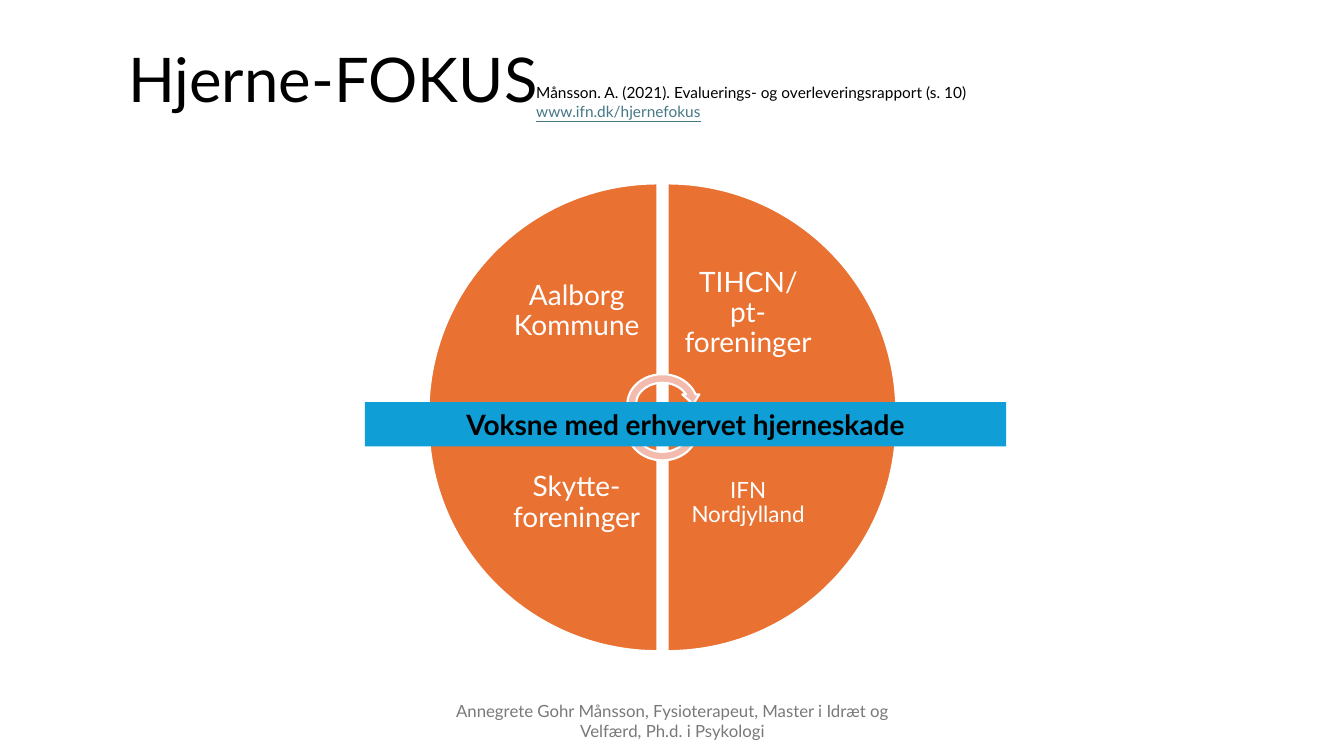
from pptx import Presentation
from pptx.dml.color import RGBColor
from pptx.enum.shapes import MSO_SHAPE
from pptx.enum.text import MSO_ANCHOR, PP_ALIGN
from pptx.util import Emu, Pt

PX = 9144  # 100 px to the inch
FONT = "Lato"
WHITE, BLACK, ORANGE = "FFFFFF", "000000", "E97132"

# label, column, row, rotation, text size, label lift
WEDGES = [
    ("Aalborg Kommune", 0, 0, 0, 20, 20),
    ("TIHCN/pt-foreninger", 1, 0, 90, 20, 18),
    ("IFN Nordjylland", 1, 1, 180, 16, 0),
    ("Skytte-foreninger", 0, 1, 270, 20, 0),
]


def px(*lengths):
    return [Emu(n * PX) for n in lengths]


def rgb(code):
    return RGBColor.from_string(code)


def add_run(p, text, size, color, bold=False, underline=False):
    r = p.add_run()
    r.text = text
    r.font.name, r.font.size = FONT, Pt(size)
    r.font.color.rgb = rgb(color)
    r.font.bold, r.font.underline = bold, underline


def add_preset(s, kind, box, fill, line=None, rotation=0):
    sp = s.shapes.add_shape(kind, *px(*box))
    sp.shadow.inherit = False
    sp.rotation = rotation
    sp.fill.solid()
    sp.fill.fore_color.rgb = rgb(fill)
    if line:
        sp.line.color.rgb = rgb(line)
        sp.line.width = Pt(1.5)
    else:
        sp.line.fill.background()
    return sp


def add_text(s, box, align=PP_ALIGN.LEFT, anchor=MSO_ANCHOR.TOP, inset=None):
    tf = s.shapes.add_textbox(*px(*box)).text_frame
    tf.word_wrap = True
    tf.vertical_anchor = anchor
    if inset:
        tf.margin_left, tf.margin_top, tf.margin_right, tf.margin_bottom = px(*[inset] * 4)
    p = tf.paragraphs[0]
    p.alignment = align
    return p


def add_title(s, box):
    sp = s.shapes.title
    sp.left, sp.top, sp.width, sp.height = px(*box)
    sp.text_frame.vertical_anchor = MSO_ANCHOR.MIDDLE
    p = sp.text_frame.paragraphs[0]
    p.alignment, p.line_spacing = PP_ALIGN.LEFT, 0.9
    add_run(p, "Hjerne-FOKUS", 44, BLACK)


def add_source(s, box):
    p = add_text(s, box)
    add_run(p, "Månsson. A. (2021). Evaluerings- og overleveringsrapport (s. 10)", 11, BLACK)
    p.add_line_break()
    add_run(p, "www.ifn.dk/hjernefokus", 11, "467886", underline=True)


def add_cycle(s, box):
    left, top, size, _ = box
    wedge, label = 227, 160
    pitch = size - wedge
    # Quarter wedges, each label against the inner corner
    for text, col, row, rotation, pt, lift in WEDGES:
        x, y = left + col * pitch, top + row * pitch
        add_preset(s, MSO_SHAPE.PIE_WEDGE, (x, y, wedge, wedge), ORANGE, WHITE, rotation)
        label_box = (x + (1 - col) * (wedge - label),
                     y + (1 - row) * (wedge - label) - lift, label, label)
        p = add_text(s, label_box, PP_ALIGN.CENTER, MSO_ANCHOR.MIDDLE, 16 if pt == 20 else 12)
        p.line_spacing = 0.9
        add_run(p, text, pt, WHITE)
    # Circular arrows around the centre
    for dy, rotation in ((185, 0), (211, 180)):
        add_preset(s, MSO_SHAPE.CIRCULAR_ARROW, (left + 193, top + dy, 78, 68),
                   "F2BBAE", WHITE, rotation)


def add_banner(s, box):
    sp = add_preset(s, MSO_SHAPE.RECTANGLE, box, "0F9ED5")
    sp.text_frame.vertical_anchor = MSO_ANCHOR.MIDDLE
    p = sp.text_frame.paragraphs[0]
    p.alignment = PP_ALIGN.CENTER
    add_run(p, "Voksne med erhvervet hjerneskade", 20, BLACK, bold=True)


def add_author(s, box):
    p = add_text(s, box, PP_ALIGN.CENTER, MSO_ANCHOR.MIDDLE)
    add_run(p, "Annegrete Gohr Månsson, Fysioterapeut, Master i Idræt og "
               "Velfærd, Ph.d. i Psykologi", 12, "797979")


def main():
    prs = Presentation()
    prs.slide_width, prs.slide_height = px(1333, 750)
    s = prs.slides.add_slide(prs.slide_layouts[5])
    add_cycle(s, (425, 182, 464, 464))
    add_banner(s, (362, 399, 636, 44))
    add_title(s, (117, 41, 972, 81))
    add_author(s, (442, 695, 450, 40))
    add_source(s, (522, 78, 607, 29))
    prs.save("out.pptx")


if __name__ == "__main__":
    main()
